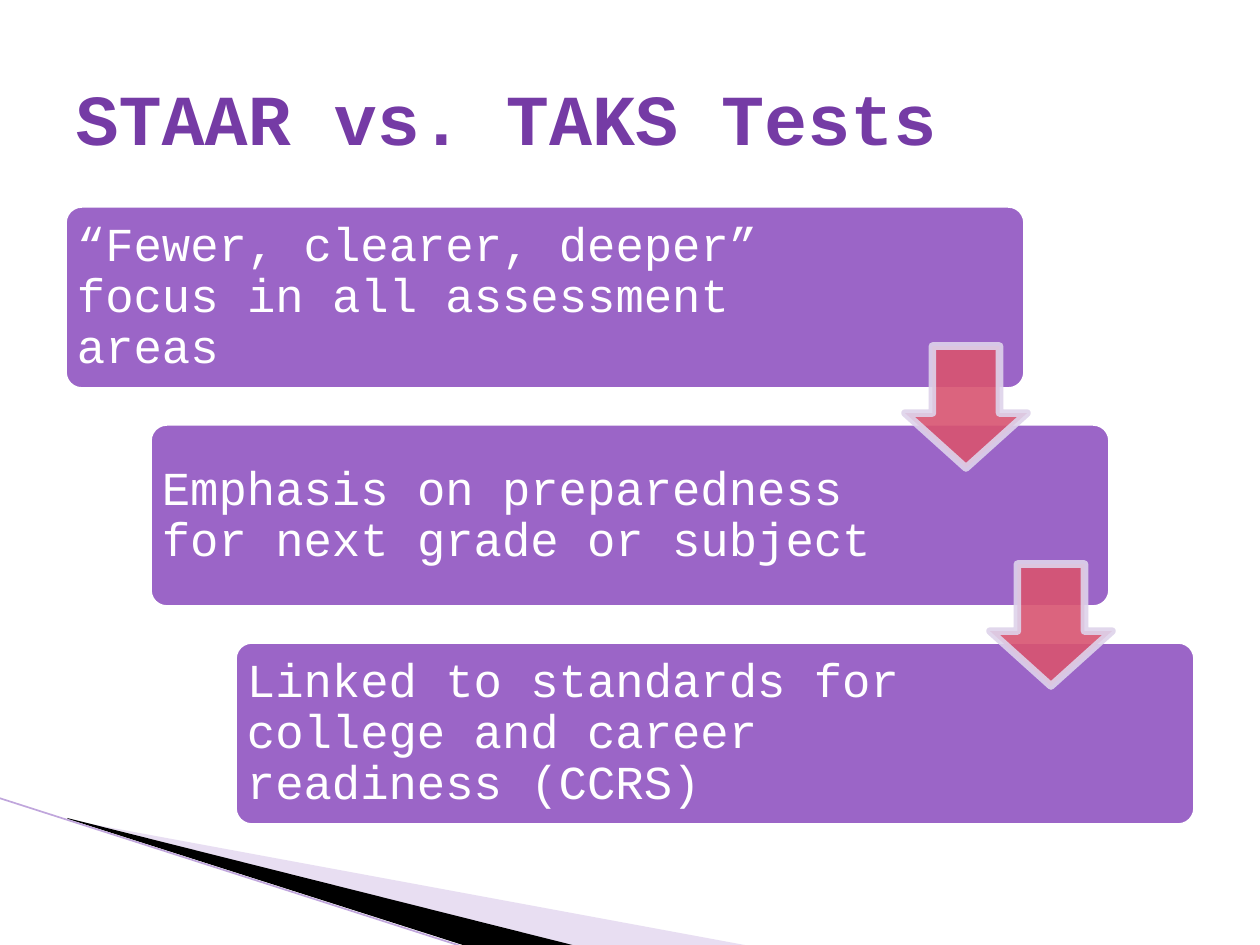
from lxml import etree
from pptx import Presentation
from pptx import util as u
from pptx.dml.color import RGBColor
from pptx.enum import shapes, text
from pptx.oxml.ns import qn

PX = 914400 / 126
FONT = "Courier New"
PURPLE, DEEP, ROSE, LILAC = "9B65C7", "753BA5", "D85470", "DED3EB"


def px(n):
    return u.Emu(round(n * PX))


def paint(fill, color, alpha=100):
    """Fill with a solid colour; alpha is the opacity in percent."""
    fill.solid()
    fill.fore_color.rgb = RGBColor.from_string(color)
    if alpha < 100:
        clr = fill._xPr.find(".//" + qn("a:srgbClr"))
        etree.SubElement(clr, qn("a:alpha"), val=str(alpha * 1000))


def write(tf, words, size, color, bold=False, spacing=None):
    tf.word_wrap = True
    tf.auto_size = text.MSO_AUTO_SIZE.NONE
    tf.vertical_anchor = text.MSO_ANCHOR.MIDDLE
    p = tf.paragraphs[0]
    p.alignment = text.PP_ALIGN.LEFT
    if spacing:
        p.line_spacing = spacing
    r = p.add_run()
    r.text = words
    r.font.name, r.font.size, r.font.bold = FONT, u.Pt(size), bold
    r.font.color.rgb = RGBColor.from_string(color)


class Deck:
    def __init__(self):
        self.prs = Presentation()
        self.prs.slide_width, self.prs.slide_height = px(1260), px(945)
        self.s = self.prs.slides.add_slide(self.prs.slide_layouts[5])

    def title(self, words, x, y, w, h):
        sp = self.s.shapes.title
        sp.left, sp.top, sp.width, sp.height = map(px, (x, y, w, h))
        write(sp.text_frame, words, 41, DEEP, bold=True)

    def wedge(self, points, color, alpha=100):
        fb = self.s.shapes.build_freeform(*points[0], scale=PX)
        fb.add_line_segments(points[1:], close=True)
        sp = fb.convert_to_shape()
        sp.shadow.inherit = False
        paint(sp.fill, color, alpha)
        sp.line.fill.background()

    def line(self, x1, y1, x2, y2, color, width):
        ln = self.s.shapes.add_connector(
            shapes.MSO_CONNECTOR.STRAIGHT, *map(px, (x1, y1, x2, y2)))
        paint(ln.line.fill, color)
        ln.line.width = u.Pt(width)
        etree.SubElement(ln._element.spPr, qn("a:effectLst"))

    def shape(self, kind, x, y, w, h, adj, fill, line, alpha=100):
        sp = self.s.shapes.add_shape(kind, *map(px, (x, y, w, h)))
        for i, value in enumerate(adj):
            sp.adjustments[i] = value
        sp.shadow.inherit = False
        paint(sp.fill, fill, alpha)
        paint(sp.line.fill, line, alpha)
        sp.line.width = u.Pt(4.33)

    def label(self, words, x, y, w, h):
        tf = self.s.shapes.add_textbox(*map(px, (x, y, w, h))).text_frame
        tf.margin_left = tf.margin_right = px(14)
        tf.margin_top = tf.margin_bottom = px(14)
        write(tf, words, 27, "FFFFFF", spacing=0.9)


def main():
    d = Deck()
    d.wedge([(69, 820), (750, 946), (575, 946), (69, 819)], "C6ADE0", 40)
    d.wedge([(67, 818), (576, 946), (469, 947), (68, 819)], "000000")
    d.line(-1, 798, 467, 948, "C0A6DC", 0.95)
    d.title("STAAR vs. TAKS Tests", 63, 38, 1134, 158)

    steps = [
        ("“Fewer, clearer, deeper” focus in all assessment areas", 772),
        ("Emphasis on preparedness for next grade or subject", 757),
        ("Linked to standards for college and career readiness (CCRS)", 757),
    ]
    kind = shapes.MSO_SHAPE
    dx, dy = 85, 218
    for i, (words, width) in enumerate(steps):
        x, y = 63 + i * dx, 204 + i * dy
        d.shape(kind.ROUNDED_RECTANGLE, x, y, 964, 187, [0.1], PURPLE, "FFFFFF")
        d.label(words, x, y, width, 187)
    for i in range(len(steps) - 1):
        d.shape(kind.DOWN_ARROW, 905 + i * dx, 346 + i * dy, 122, 122,
                [0.55, 0.45], ROSE, LILAC, alpha=90)

    d.prs.save("out.pptx")


if __name__ == "__main__":
    main()
